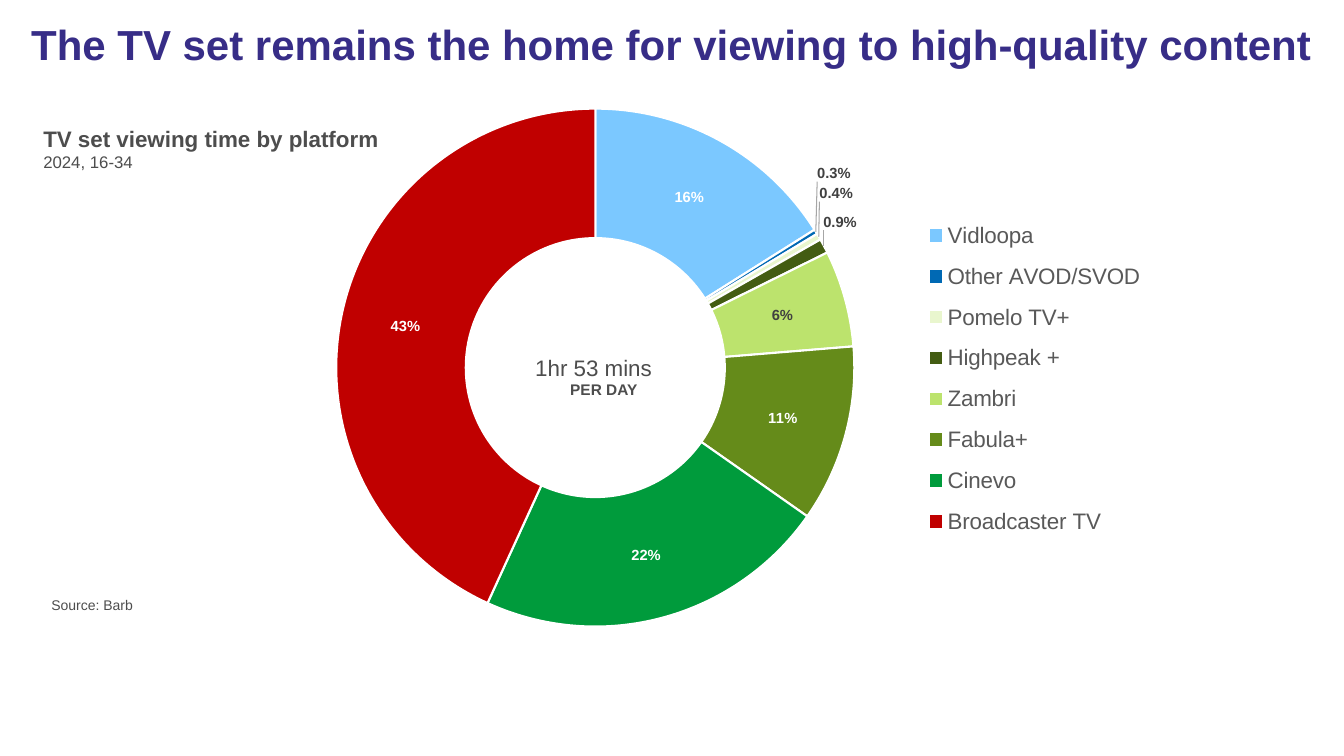
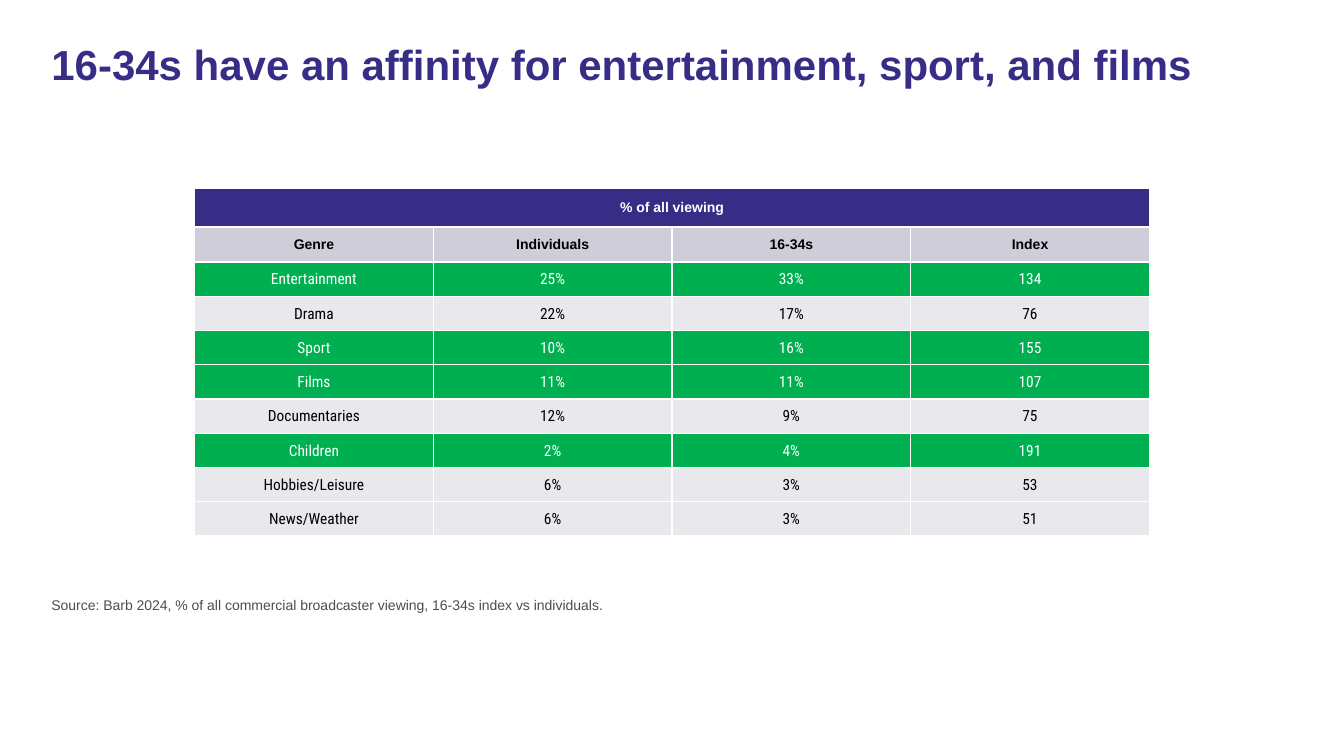
from lxml.etree import SubElement
from pptx import Presentation
from pptx.chart.data import CategoryChartData
from pptx.dml.color import RGBColor
from pptx.enum.chart import XL_CHART_TYPE as ChartType, XL_LEGEND_POSITION as LegendPosition
from pptx.enum.text import MSO_ANCHOR as Anchor, PP_ALIGN as Align
from pptx.oxml import parse_xml
from pptx.oxml.ns import nsdecls, qn
from pptx.util import Inches, Pt

SLIDE_WIDTH, SLIDE_HEIGHT = Inches(13.33), Inches(7.5)

PURPLE = RGBColor(0x37, 0x2D, 0x87)
GREY = RGBColor(0x4D, 0x4D, 0x4D)
LEGEND_GREY = RGBColor(0x59, 0x59, 0x59)
LABEL_GREY = RGBColor(0x40, 0x40, 0x40)
LILAC = RGBColor(0xCE, 0xCD, 0xD9)
PALE = RGBColor(0xE8, 0xE8, 0xED)
GREEN = RGBColor(0x00, 0xB0, 0x50)
WHITE = RGBColor(0xFF, 0xFF, 0xFF)
BLACK = RGBColor(0x00, 0x00, 0x00)

TITLE = {"size": Pt(30), "bold": True, "color": PURPLE}
SOURCE = {"size": Pt(10), "color": GREY}
HEADING = {"size": Pt(16), "bold": True, "color": GREY}
SUBHEADING = {"size": Pt(12), "color": GREY}
BIG_FIGURE = {"size": Pt(16), "color": GREY}
UNIT = {"size": Pt(11), "bold": True, "color": GREY}
LEGEND = {"size": Pt(16), "color": LEGEND_GREY}
LABEL = {"size": Pt(10.5), "bold": True, "color": LABEL_GREY}
TABLE_HEAD = {"size": Pt(10), "bold": True}
TABLE_BODY = {"size": Pt(11), "bold": False, "name": "Roboto Condensed"}

# Platform, share, slice colour, label colour, label offset (shares of the chart)
PLATFORMS = [
    ("Vidloopa", 16, "7BC8FF", WHITE, None),
    ("Other AVOD/SVOD", 0.3, "0069B4", LABEL_GREY, (0.08, -0.17)),
    ("Pomelo TV+", 0.4, "E9F6CE", LABEL_GREY, (0.08, -0.14)),
    ("Highpeak +", 0.9, "435C12", LABEL_GREY, (0.08, -0.1)),
    ("Zambri", 6, "BCE36D", LABEL_GREY, None),
    ("Fabula+", 11, "658B1A", WHITE, None),
    ("Cinevo", 22, "009B3C", WHITE, None),
    ("Broadcaster TV", 43, "C00000", WHITE, None),
]

GENRES = [
    ("Entertainment", "25%", "33%", "134"),
    ("Drama", "22%", "17%", "76"),
    ("Sport", "10%", "16%", "155"),
    ("Films", "11%", "11%", "107"),
    ("Documentaries", "12%", "9%", "75"),
    ("Children", "2%", "4%", "191"),
    ("Hobbies/Leisure", "6%", "3%", "53"),
    ("News/Weather", "6%", "3%", "51"),
]


def area(left, top, width, height):
    """Turn percentages of the slide's size into lengths."""
    return (int(SLIDE_WIDTH * left / 100), int(SLIDE_HEIGHT * top / 100),
            int(SLIDE_WIDTH * width / 100), int(SLIDE_HEIGHT * height / 100))


def set_font(font, formats):
    for key, value in {"name": "Arial", "bold": False, **formats}.items():
        if key == "color":
            font.color.rgb = value
        else:
            setattr(font, key, value)


def add_text(page, place, *lines):
    """Add a text box; each line is (text, formats, alignment)."""
    frame = page.shapes.add_textbox(*area(*place)).text_frame
    frame.word_wrap = True
    for index, (text, formats, alignment) in enumerate(lines):
        para = frame.add_paragraph() if index else frame.paragraphs[0]
        para.alignment = alignment
        span = para.add_run()
        span.text = text
        set_font(span.font, formats)
    return frame


def add_page(deck, title, title_place, source):
    page = deck.slides.add_slide(deck.slide_layouts[6])
    frame = add_text(page, title_place, (title, TITLE, Align.LEFT))
    frame.paragraphs[0].line_spacing = 0.9
    add_text(page, (3.08, 78.27, 93.02, 4.4), (source, SOURCE, Align.LEFT))
    return page


def set_layout(element, index, **values):
    """Give a chart part a manual layout, as its child number index."""
    for old in element.findall(qn("c:layout")):
        element.remove(old)
    layout = parse_xml(f"<c:layout {nsdecls('c')}/>")
    manual = SubElement(layout, qn("c:manualLayout"))
    for key, value in values.items():
        SubElement(manual, qn(f"c:{key}"), val=str(value))
    element.insert(index, layout)


def style_labels(series):
    labels = series.data_labels
    set_font(labels.font, LABEL)
    labels.show_value, labels.show_percentage = False, True
    labels.number_format, labels.number_format_is_linked = "0%", False
    for index, (_, _, fill, color, _) in enumerate(PLATFORMS):
        point = series.points[index]
        point.format.fill.solid()
        point.format.fill.fore_color.rgb = RGBColor.from_string(fill)
        point.format.line.color.rgb = WHITE
        point.format.line.width = Pt(1.5)
        set_font(point.data_label.font, {**LABEL, "color": color})
    all_labels = series._element.find(qn("c:dLbls"))
    for label, (*_, offset) in zip(all_labels.findall(qn("c:dLbl")), PLATFORMS):
        label.find(qn("c:showVal")).set("val", "0")
        label.find(qn("c:showPercent")).set("val", "1")
        code = "0.0%" if offset else "0%"
        label.insert(1, parse_xml(
            f'<c:numFmt {nsdecls("c")} formatCode="{code}" sourceLinked="0"/>'))
        if offset:
            set_layout(label, 1, x=offset[0], y=offset[1])
    all_labels.append(parse_xml(
        f'<c:leaderLines {nsdecls("c", "a")}><c:spPr><a:ln w="9525"><a:solidFill>'
        '<a:srgbClr val="A6A6A6"/></a:solidFill></a:ln></c:spPr></c:leaderLines>'))


def add_doughnut(page, place):
    data = CategoryChartData()
    data.categories = [platform[0] for platform in PLATFORMS]
    data.add_series("Series 1", [platform[1] for platform in PLATFORMS])
    chart = page.shapes.add_chart(ChartType.DOUGHNUT, *area(*place), data).chart
    set_font(chart.font, {"size": Pt(10.5), "color": BLACK})
    chart.has_title = False
    chart.has_legend = True
    chart.legend.position = LegendPosition.RIGHT
    chart.legend.include_in_layout = False
    set_font(chart.legend.font, LEGEND)
    plot = chart.plots[0]
    plot.vary_by_categories = True
    style_labels(plot.series[0])

    space = chart.element
    space.find(".//" + qn("c:holeSize")).set("val", "49")
    set_layout(space.find(".//" + qn("c:plotArea")), 0, layoutTarget="inner",
               xMode="edge", yMode="edge", x=0.09, y=0.02, w=0.57, h=0.95)
    set_layout(space.find(".//" + qn("c:legend")), 1,
               xMode="edge", yMode="edge", x=0.72, y=0.2, w=0.27, h=0.63)


def set_borders(cell, **widths):
    """Draw white borders of 1 point, or of the width given for a side."""
    for index, side in enumerate("LRTB"):
        width = int(Pt(widths.get(side, 1)))
        cell._tc.get_or_add_tcPr().insert(index, parse_xml(
            f'<a:ln{side} {nsdecls("a")} w="{width}"><a:solidFill>'
            f'<a:srgbClr val="{WHITE}"/></a:solidFill></a:ln{side}>'))


def fill_cell(cell, text, fill, color, formats, **borders):
    cell.fill.solid()
    cell.fill.fore_color.rgb = fill
    set_borders(cell, **borders)
    cell.vertical_anchor = Anchor.MIDDLE
    cell.margin_left = cell.margin_right = cell.margin_top = Inches(0.01)
    cell.margin_bottom = 0
    para = cell.text_frame.paragraphs[0]
    para.alignment = Align.CENTER
    para.text = text
    set_font(para.runs[0].font if text else para.font, {**formats, "color": color})


def add_genre_table(page, place):
    header = ("Genre", "Individuals", "16-34s", "Index")
    table = page.shapes.add_table(len(GENRES) + 2, len(header), *area(*place)).table
    heights = [0.38, 0.35] + [0.34] * len(GENRES)
    for row, height in zip(table.rows, heights):
        row.height = Inches(height)

    for column, text in enumerate(header):
        banner = "" if column else "% of all viewing"
        fill_cell(table.cell(0, column), banner, PURPLE, WHITE, TABLE_HEAD, B=1.5)
        fill_cell(table.cell(1, column), text, LILAC, BLACK, TABLE_HEAD, T=1.5)
    table.cell(0, 0).merge(table.cell(0, len(header) - 1))

    for row, values in enumerate(GENRES, start=2):
        over_indexed = int(values[-1]) > 100
        fill, color = (GREEN, WHITE) if over_indexed else (PALE, BLACK)
        for column, text in enumerate(values):
            fill_cell(table.cell(row, column), text, fill, color, TABLE_BODY)


def add_platform_page(deck):
    page = add_page(deck, "The TV set remains the home for viewing to high-quality content",
                    (1.58, 2.53, 97.52, 14.93), "Source: Barb")
    add_doughnut(page, (18.75, 12.93, 68.12, 72.13))
    add_text(page, (39.08, 46.13, 11.7, 7.6),
             ("1hr 53 mins", BIG_FIGURE, Align.LEFT), ("PER DAY", UNIT, Align.CENTER))
    add_text(page, (2.48, 15.87, 33.91, 7.6),
             ("TV set viewing time by platform", HEADING, Align.LEFT),
             ("2024, 16-34", SUBHEADING, Align.LEFT))


def add_genre_page(deck):
    page = add_page(deck, "16-34s have an affinity for entertainment, sport, and films",
                    (3.08, 5.2, 93.02, 14.93),
                    "Source: Barb 2024, % of all commercial broadcaster viewing, "
                    "16-34s index vs individuals.")
    add_genre_table(page, (14.48, 24.93, 71.04, 45.47))


def main():
    deck = Presentation()
    deck.slide_width, deck.slide_height = SLIDE_WIDTH, SLIDE_HEIGHT
    add_platform_page(deck)
    add_genre_page(deck)
    deck.save("out.pptx")


if __name__ == "__main__":
    main()
